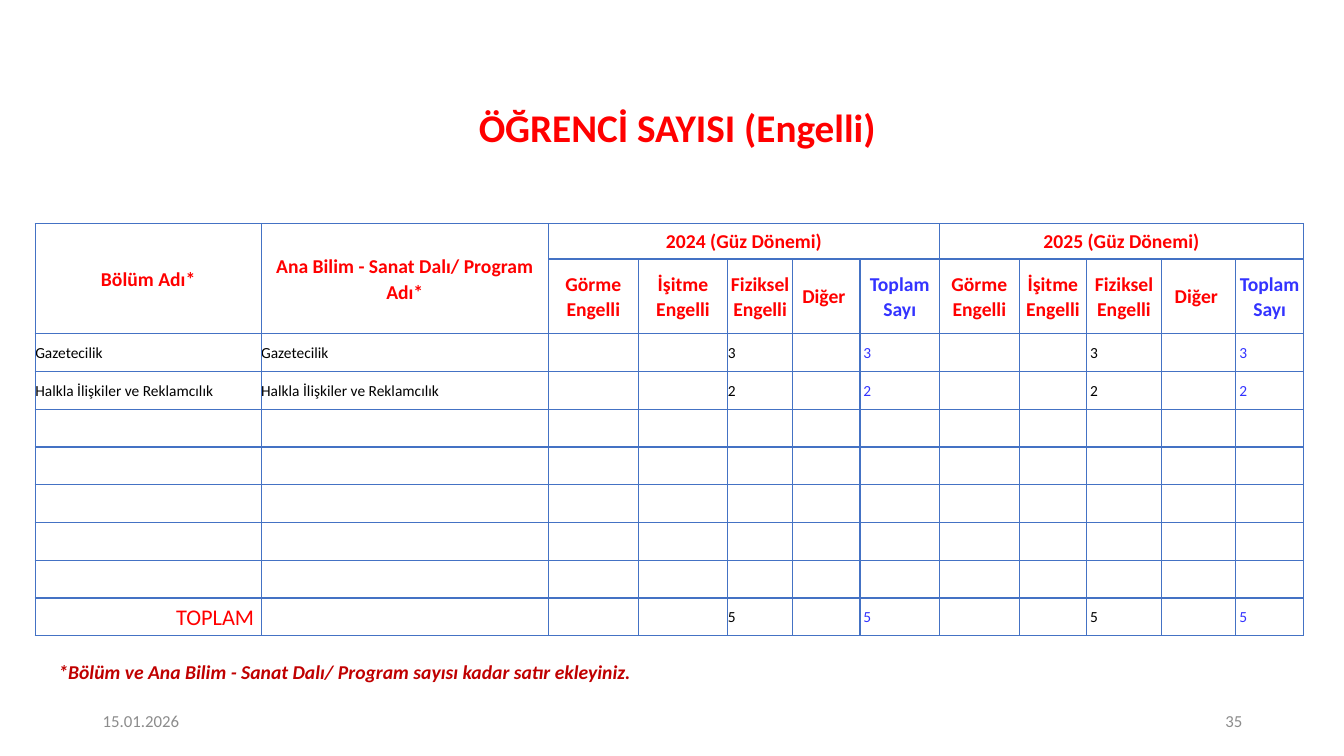
from lxml import etree
from pptx import Presentation
from pptx.dml.color import RGBColor
from pptx.enum.text import MSO_ANCHOR, PP_ALIGN
from pptx.oxml.ns import qn
from pptx.util import Inches, Pt

LEFT, CENTER, RIGHT = PP_ALIGN.LEFT, PP_ALIGN.CENTER, PP_ALIGN.RIGHT
TOP, MIDDLE = MSO_ANCHOR.TOP, MSO_ANCHOR.MIDDLE

RED = RGBColor(0xFF, 0x00, 0x00)
DARK_RED = RGBColor(0xC0, 0x00, 0x00)
BLUE = RGBColor(0x33, 0x33, 0xFF)
BLACK = RGBColor(0x00, 0x00, 0x00)
GRAY = RGBColor(0x8C, 0x8C, 0x8C)
BORDER = RGBColor(0x44, 0x72, 0xC4)

FONT = "Calibri"
COLUMN_WIDTHS = [2.24, 2.85, 0.89, 0.89, 0.64, 0.67, 0.79, 0.79, 0.67, 0.74, 0.74, 0.67]
ROW_HEIGHTS = [0.35, 0.74] + [0.375] * 8
TERMS = {2: "2024 (Güz Dönemi)", 7: "2025 (Güz Dönemi)"}
CATEGORIES = ["Görme Engelli", "İşitme Engelli", "Fiziksel Engelli", "Diğer ", "Toplam Sayı"]
DEPARTMENTS = {"Gazetecilik": 3, "Halkla İlişkiler ve Reklamcılık": 2}
COUNT_COLUMNS = {4: BLACK, 6: BLUE, 9: BLACK, 11: BLUE}


def style_paragraph(paragraph, size, color, bold=False, italic=False, align=LEFT):
    paragraph.alignment = align
    font = paragraph.font
    font.name, font.size = FONT, Pt(size)
    font.bold, font.italic = bold, italic
    font.color.rgb = color


def add_text(slide, text, left, top, width, height, size, color, anchor=MIDDLE, spacing=1.0, **style):
    box = slide.shapes.add_textbox(Inches(left), Inches(top), Inches(width), Inches(height))
    frame = box.text_frame
    frame.word_wrap = True
    frame.vertical_anchor = anchor
    paragraph = frame.paragraphs[0]
    paragraph.text = text
    paragraph.line_spacing = spacing
    style_paragraph(paragraph, size, color, **style)


def format_cell(cell):
    properties = cell._tc.get_or_add_tcPr()
    for side in ("a:lnL", "a:lnR", "a:lnT", "a:lnB"):
        line = etree.SubElement(properties, qn(side), w=str(Pt(1)))
        fill = etree.SubElement(line, qn("a:solidFill"))
        etree.SubElement(fill, qn("a:srgbClr"), val=str(BORDER))
    cell.fill.background()
    cell.margin_left = cell.margin_right = cell.margin_top = cell.margin_bottom = 0
    cell.vertical_anchor = MIDDLE
    style_paragraph(cell.text_frame.paragraphs[0], 11, BLACK)


def write_cell(cell, text, size=11, color=BLACK, **style):
    paragraph = cell.text_frame.paragraphs[0]
    paragraph.text = text
    paragraph.line_spacing = 1.07
    style_paragraph(paragraph, size, color, **style)


def write_header(cell, text, color=RED):
    write_cell(cell, text, 14, color, bold=True, align=CENTER)


def write_counts(table, row, count):
    for column, color in COUNT_COLUMNS.items():
        text = str(count) if column == 4 else f" {count}"
        write_cell(table.cell(row, column), text, color=color)


def add_student_table(slide):
    frame = slide.shapes.add_table(
        len(ROW_HEIGHTS), len(COLUMN_WIDTHS),
        Inches(0.35), Inches(2.22), Inches(sum(COLUMN_WIDTHS)), Inches(sum(ROW_HEIGHTS)))
    table = frame.table
    table.first_row = table.horz_banding = False
    for column, width in zip(table.columns, COLUMN_WIDTHS):
        column.width = Inches(width)
    for row, height in zip(table.rows, ROW_HEIGHTS):
        row.height = Inches(height)
    for cell in table.iter_cells():
        format_cell(cell)

    for column, heading in enumerate(["Bölüm Adı*", "Ana Bilim - Sanat Dalı/ Program Adı*"]):
        table.cell(0, column).merge(table.cell(1, column))
        write_header(table.cell(0, column), heading)
    for start, term in TERMS.items():
        table.cell(0, start).merge(table.cell(0, start + len(CATEGORIES) - 1))
        write_header(table.cell(0, start), term)
        for column, category in enumerate(CATEGORIES, start):
            color = BLUE if category == CATEGORIES[-1] else RED
            write_header(table.cell(1, column), category, color)

    for row, (department, count) in enumerate(DEPARTMENTS.items(), 2):
        write_cell(table.cell(row, 0), department)
        write_cell(table.cell(row, 1), department)
        write_counts(table, row, count)

    total_row = len(ROW_HEIGHTS) - 1
    total_cell = table.cell(total_row, 0)
    write_cell(total_cell, "TOPLAM", 16, RED, align=RIGHT)
    total_cell.margin_right = Inches(0.07)
    write_counts(table, total_row, sum(DEPARTMENTS.values()))


def main():
    presentation = Presentation()
    presentation.slide_width = Inches(13.33)
    presentation.slide_height = Inches(7.5)
    slide = presentation.slides.add_slide(presentation.slide_layouts[6])
    add_text(slide, "ÖĞRENCİ SAYISI (Engelli) ", 0.73, 0.96, 12.06, 0.66, 28, RED,
             spacing=0.9, bold=True, align=CENTER)
    add_text(slide, "15.01.2026", 0.92, 6.95, 3, 0.4, 12, GRAY)
    add_text(slide, "35", 9.42, 6.95, 3, 0.4, 12, GRAY, align=RIGHT)
    add_text(slide, "*Bölüm ve Ana Bilim - Sanat Dalı/ Program sayısı kadar satır ekleyiniz.",
             0.48, 6.5, 8.48, 0.34, 14, DARK_RED, anchor=TOP, bold=True, italic=True)
    add_student_table(slide)
    presentation.save("out.pptx")


if __name__ == "__main__":
    main()
